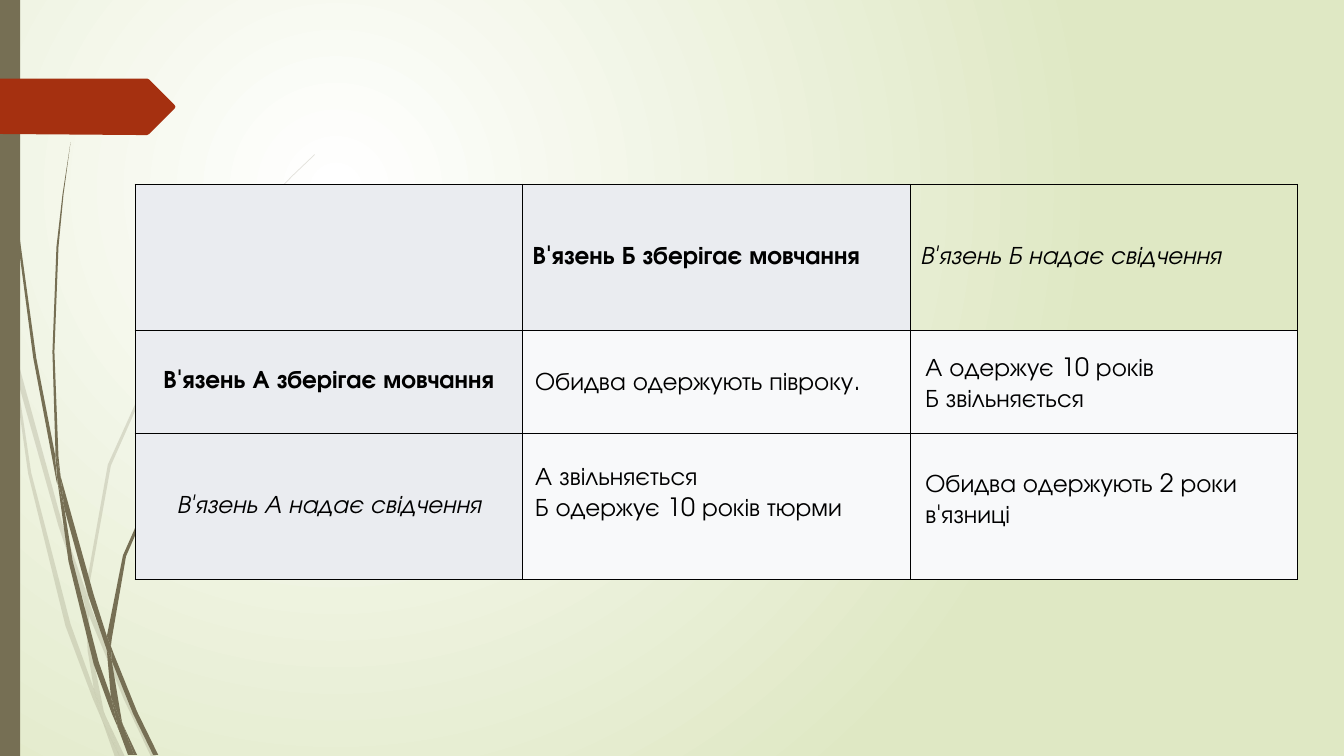
import pptx
import pptx.util
import pptx.dml.color
import pptx.enum.shapes
import pptx.enum.text
import pptx.oxml.ns
from lxml import etree

Inches, Pt = pptx.util.Inches, pptx.util.Pt
RGB = pptx.dml.color.RGBColor
qn = pptx.oxml.ns.qn
WHITE = RGB(0xFF, 0xFF, 0xFF)
LIME = RGB(0xDF, 0xE8, 0xC4)
OLIVE = RGB(0x76, 0x6F, 0x54)
RUST = RGB(0xA5, 0x30, 0x10)
BLACK = RGB(0, 0, 0)
HEAD = RGB(0xEA, 0xEC, 0xF0)
BODY = RGB(0xF8, 0xF9, 0xFA)
FONT = "TeX Gyre Adventor"

# Outlines of the grass blades, in hundredths of an inch
PALE = [
    [(58, 522), (84, 599), (85, 586), (62, 520), (14, 345), (17, 376)],
    [(92, 607), (88, 596), (88, 610), (123, 694), (150, 751), (155, 751), (127, 692)],
    [(119, 751), (124, 751), (105, 711)],
    [(93, 683), (70, 619), (31, 469), (17, 376), (11, 350), (28, 470),
     (65, 621), (92, 693), (101, 714), (99, 707)],
    [(84, 599), (87, 646), (93, 683), (96, 692), (105, 711),
     (103, 706), (91, 646), (88, 610), (88, 608)],
    [(88, 584), (110, 462), (160, 349), (229, 245), (268, 198),
     (290, 175), (312, 154), (312, 153), (289, 175), (268, 197),
     (228, 244), (158, 348), (107, 461), (85, 584), (88, 596)],
    [(101, 714), (114, 751), (119, 751)],
    [(88, 608), (88, 610), (88, 596), (85, 586), (84, 599)],
    [(96, 692), (93, 683), (99, 707), (101, 714), (119, 751), (105, 711)],
]
DARK = [
    [(7, 110), (17, 233), (33, 355), (56, 477), (57, 481), (55, 457), (55, 453),
     (36, 355), (19, 232), (8, 109), (5, 48), (4, 0), (3, 0), (4, 48)],
    [(88, 592), (106, 645), (106, 631), (93, 590), (60, 472), (64, 505)],
    [(113, 649), (110, 641), (111, 656), (132, 708), (152, 749), (157, 749), (136, 706)],
    [(110, 691), (98, 657), (72, 556), (64, 505), (57, 477), (68, 557),
     (93, 659), (111, 708), (117, 722), (116, 717)],
    [(60, 472), (58, 453), (54, 349), (58, 245), (63, 193), (70, 141),
     (62, 193), (56, 245), (52, 349), (55, 449)],
    [(133, 749), (136, 749), (122, 719)],
    [(57, 477), (64, 505), (60, 472), (55, 449), (55, 453)],
    [(111, 633), (125, 552), (158, 476), (205, 406), (231, 374),
     (245, 359), (261, 344), (260, 344), (245, 358), (231, 373),
     (204, 405), (156, 474), (122, 551), (106, 631), (110, 641)],
    [(117, 722), (127, 749), (131, 749)],
    [(106, 645), (110, 691), (116, 706), (122, 719), (121, 716), (111, 656), (109, 651)],
    [(106, 645), (109, 651), (111, 656), (110, 641), (106, 631)],
    [(116, 706), (110, 691), (116, 717), (117, 722), (130, 749), (133, 749), (122, 719)],
]
ARROW = [(174, 106), (173, 108), (148, 133), (146, 134), (136, 134),
         (0, 133), (0, 78), (146, 78), (148, 79), (173, 104)]

deck = pptx.Presentation()
deck.slide_width, deck.slide_height = Inches(13.33), Inches(7.5)
slide = deck.slides.add_slide(deck.slide_layouts[6])
shapes = slide.shapes

back = slide.background.fill
back.gradient()
for stop, tint in zip(back.gradient_stops, (WHITE, LIME)):
    stop.color.rgb = tint
grad = slide.element.find(".//" + qn("a:gradFill"))
grad.remove(grad.find(qn("a:lin")))
glow = etree.SubElement(grad, qn("a:path"), path="circle")
etree.SubElement(glow, qn("a:fillToRect"), l="50000", t="50000", r="100000", b="100000")


def paint(shape, color, alpha=100):
    shape.shadow.inherit = False
    shape.fill.solid()
    shape.fill.fore_color.rgb = color
    shape.line.fill.background()
    if alpha < 100:
        tone = shape.element.spPr.find(".//" + qn("a:srgbClr"))
        etree.SubElement(tone, qn("a:alpha"), val=str(alpha * 1000))


def trace(dots):
    """Add a closed outline through dots given in hundredths of an inch."""
    pen = shapes.build_freeform(*dots[0], scale=Inches(.01))
    pen.add_line_segments(dots[1:], close=True)
    return pen.convert_to_shape()


for blades, alpha in ((PALE, 20), (DARK, 100)):
    for blade in blades:
        paint(trace(blade), OLIVE, alpha)
bar = shapes.add_shape(pptx.enum.shapes.MSO_SHAPE.RECTANGLE, 0, 0, Inches(.2), deck.slide_height)
paint(bar, OLIVE)
paint(trace(ARROW), RUST)

# Payoff table: only the row and column heads hold text
LEFT, TOP, WIDE = 1.34, 1.83, 11.53
ROWS = [1.45, 1.02, 1.45]
HEADS = {
    (0, 1): "В'язень Б зберігає мовчання",
    (0, 2): "В'язень Б надає свідчення",
    (1, 0): "В'язень А зберігає мовчання",
    (2, 0): "В'язень А надає свідчення",
}
frames = []
grid = shapes.add_table(3, 3, Inches(LEFT), Inches(TOP), Inches(WIDE), Inches(sum(ROWS))).table
grid.first_row = grid.horz_banding = False
for r, high in enumerate(ROWS):
    grid.rows[r].height = Inches(high)
    for c in range(3):
        grid.columns[c].width = Inches(WIDE / 3)
        cell = grid.cell(r, c)
        cell.vertical_anchor = pptx.enum.text.MSO_ANCHOR.MIDDLE
        props = cell._tc.get_or_add_tcPr()
        for side in "LRTB":
            edge = etree.SubElement(props, qn("a:ln" + side), w=str(Pt(1)))
            ink = etree.SubElement(edge, qn("a:solidFill"))
            etree.SubElement(ink, qn("a:srgbClr"), val=str(BLACK))
        if (r, c) == (0, 2):
            cell.fill.background()
        else:
            cell.fill.solid()
            cell.fill.fore_color.rgb = BODY if r and c else HEAD
        if (r, c) in HEADS:
            cell.text_frame.text = HEADS[r, c]
            slant = 2 in (r, c)
            frames.append((cell.text_frame, not slant, slant))
            if c == 0:
                cell.text_frame.paragraphs[0].alignment = pptx.enum.text.PP_ALIGN.CENTER

# Outcomes lie over the body cells
for x, y, high, text in [
    (5.21, 3.58, .4, "Обидва одержують півроку."),
    (9.08, 3.44, .71, "А одержує 10 років\vБ звільняється"),
    (9.08, 4.59, .71, "Обидва одержують 2 роки в'язниці"),
    (5.21, 4.52, .71, "А звільняється\vБ одержує 10 років тюрми"),
]:
    frame = shapes.add_textbox(Inches(x), Inches(y), Inches(3.73), Inches(high)).text_frame
    frame.word_wrap = True
    frame.auto_size = pptx.enum.text.MSO_AUTO_SIZE.SHAPE_TO_FIT_TEXT
    frame.text = text
    frames.append((frame, False, False))

for frame, bold, slant in frames:
    for run in frame.paragraphs[0].runs:
        run.font.name, run.font.size = FONT, Pt(18)
        run.font.bold, run.font.italic = bold, slant
        run.font.color.rgb = BLACK

deck.save("out.pptx")
